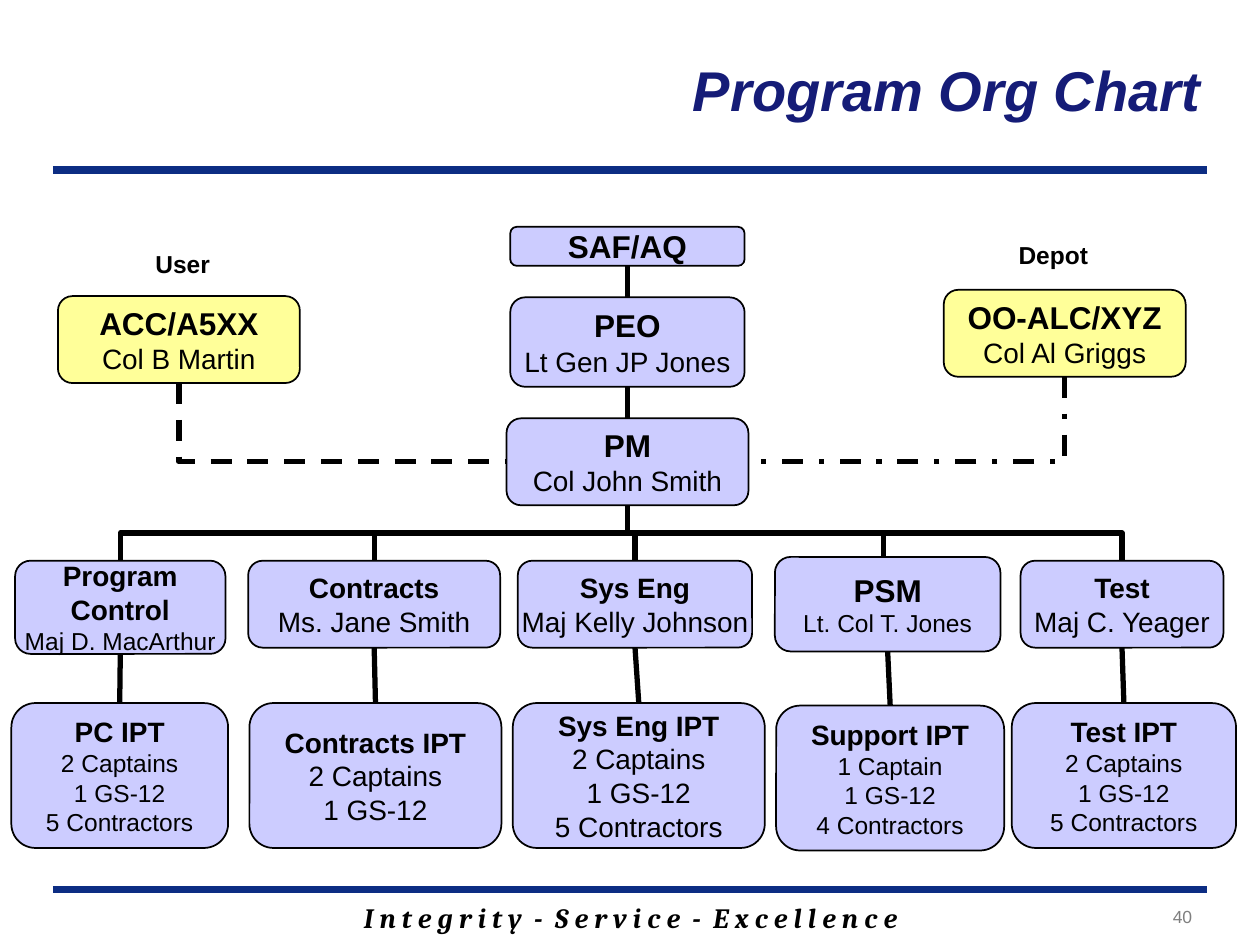
"""Build the program organisation chart slide."""
import pptx
import pptx.dml.color
import pptx.enum.dml
import pptx.enum.shapes
import pptx.enum.text
import pptx.oxml.ns
import pptx.util
from pptx.util import Inches

COLOURS = {
    "title": "151C77",
    "rule": "0C2D83",
    "program": "CCCCFF",
    "partner": "FFFF99",
    "ink": "000000",
    "number": "7F7F7F",
}
ALIGN = pptx.enum.text.PP_ALIGN
DASH = pptx.enum.dml.MSO_LINE
TOP, LEFT, BOTTOM, RIGHT = range(4)

BRANCHES = [
    ((0.12, 4.45, 1.67, 0.74), ["Program", "Control"], ["Maj D. MacArthur"], 16, 14,
     (0.09, 5.58, 1.72, 1.15), "PC IPT", ["2 Captains", "1 GS-12", "5 Contractors"], 14),
    ((1.97, 4.45, 2, 0.69), ["Contracts"], ["Ms. Jane Smith"], 16, 16,
     (1.98, 5.58, 2, 1.15), "Contracts IPT", ["2 Captains", "1 GS-12"], 16),
    ((4.11, 4.45, 1.86, 0.69), ["Sys Eng"], ["Maj Kelly Johnson"], 16, 16,
     (4.07, 5.58, 2, 1.15), "Sys Eng IPT", ["2 Captains", "1 GS-12", "5 Contractors"], 16),
    ((6.15, 4.42, 1.79, 0.75), ["PSM"], ["Lt. Col T. Jones"], 18, 14,
     (6.16, 5.6, 1.81, 1.15), "Support IPT", ["1 Captain", "1 GS-12", "4 Contractors"], 14),
    ((8.1, 4.45, 1.61, 0.69), ["Test"], ["Maj C. Yeager"], 16, 16,
     (8.03, 5.58, 1.78, 1.15), "Test IPT", ["2 Captains", "1 GS-12", "5 Contractors"], 14),
]


def colour(name):
    """Return the named colour."""
    return pptx.dml.color.RGBColor.from_string(COLOURS[name])


def inches(area):
    """Convert a tuple of inch values to lengths."""
    return [Inches(value) for value in area]


def format_para(para, text, size, bold=False, italic=False, ink="ink",
                align=ALIGN.CENTER, face="Arial"):
    """Write and format one paragraph."""
    para.text = text
    para.alignment = align
    font = para.font
    font.name, font.size = face, pptx.util.Pt(size)
    font.bold, font.italic = bold, italic
    font.color.rgb = colour(ink)


def add_label(page, area, text, size, wrap=False, **style):
    """Add a one-paragraph text box."""
    frame = page.shapes.add_textbox(*inches(area)).text_frame
    frame.word_wrap = wrap
    format_para(frame.paragraphs[0], text, size, **style)


def add_org_box(page, area, heads, details=(), head_size=18, detail_size=16, fill="program"):
    """Add a rounded box with bold heads above plain details."""
    box = page.shapes.add_shape(pptx.enum.shapes.MSO_SHAPE.ROUNDED_RECTANGLE, *inches(area))
    box.shadow.inherit = False
    box.fill.solid()
    box.fill.fore_color.rgb = colour(fill)
    box.line.color.rgb = colour("ink")
    box.line.width = pptx.util.Pt(1)
    frame = box.text_frame
    frame.word_wrap = False
    frame.vertical_anchor = pptx.enum.text.MSO_ANCHOR.MIDDLE
    lines = [(text, head_size, True) for text in heads]
    lines += [(text, detail_size, False) for text in details]
    for index, line in enumerate(lines):
        para = frame.add_paragraph() if index else frame.paragraphs[0]
        format_para(para, *line)
    return box


def add_line(page, begin, end, width=3, ink="ink", kind="STRAIGHT"):
    """Add a connector without a shadow between two points."""
    line = page.shapes.add_connector(
        getattr(pptx.enum.shapes.MSO_CONNECTOR, kind), *begin, *end)
    line.line.color.rgb = colour(ink)
    line.line.width = pptx.util.Pt(width)
    properties = line._element.spPr
    properties.append(properties.makeelement(pptx.oxml.ns.qn("a:effectLst"), {}))
    return line


def side_point(box, side):
    """Return the middle of one side of a box."""
    across = {LEFT: 0, RIGHT: box.width}.get(side, box.width // 2)
    down = {TOP: 0, BOTTOM: box.height}.get(side, box.height // 2)
    return box.left + across, box.top + down


def join(page, upper, lower, side=TOP, kind="STRAIGHT"):
    """Connect the bottom of one box to a side of another."""
    line = add_line(page, side_point(upper, BOTTOM), side_point(lower, side), kind=kind)
    line.begin_connect(upper, BOTTOM)
    line.end_connect(lower, side)
    return line


def join_elbow(page, upper, lower, side=TOP, dash=None):
    """Connect two boxes with an elbow that leaves the upper one downwards."""
    line = join(page, upper, lower, side, "ELBOW")
    (begin_x, begin_y), (end_x, end_y) = side_point(upper, BOTTOM), side_point(lower, side)
    line.width, line.height = end_y - begin_y, abs(end_x - begin_x)
    line.left = (begin_x + end_x - line.width) // 2
    line.top = (begin_y + end_y - line.height) // 2
    properties = line._element.spPr
    frame = properties.find(pptx.oxml.ns.qn("a:xfrm"))
    rightward = end_x > begin_x
    frame.set("rot", str((270 if rightward else 90) * 60000))
    frame.set("flipH", "1" if rightward else "0")
    frame.set("flipV", "0")
    if side != TOP:
        properties.find(pptx.oxml.ns.qn("a:prstGeom")).set("prst", "bentConnector2")
    if dash:
        line.line.dash_style = dash


def add_frame(page, left, right):
    """Add the title, the two rules and the footer."""
    title = page.shapes.title
    title.left, title.top, title.width, title.height = inches((1.82, 0.08, 7.81, 1.25))
    title.text_frame.vertical_anchor = pptx.enum.text.MSO_ANCHOR.MIDDLE
    format_para(title.text_frame.paragraphs[0], "Program Org Chart", 32, True, True,
                "title", ALIGN.RIGHT)
    for height in (1.35, 7.06):
        add_line(page, inches((left, height)), inches((right, height)), 4.5, "rule")
    add_label(page, (1.42, 7.1, 7.17, 0.37),
              "I n t e g r i t y  -  S e r v i c e  -  E x c e l l e n c e", 16,
              wrap=True, bold=True, italic=True, face="Cambria")
    add_label(page, (8.31, 7.14, 1.25, 0.33), "40", 10, wrap=True,
              ink="number", align=ALIGN.RIGHT)


def add_command(page):
    """Add the chain of command and return the program manager's box."""
    office = add_org_box(page, (4.05, 1.8, 1.86, 0.31), ["SAF/AQ"])
    executive = add_org_box(page, (4.05, 2.36, 1.86, 0.71), ["PEO"], ["Lt Gen JP Jones"])
    manager = add_org_box(page, (4.02, 3.32, 1.92, 0.69), ["PM"], ["Col John Smith"])
    join(page, office, executive)
    join(page, executive, manager)
    return manager


def add_partner(page, manager, area, label_area, label, unit, officer, side, dash):
    """Add a labelled outside partner linked to the manager."""
    add_label(page, label_area, label, 14, bold=True)
    partner = add_org_box(page, area, [unit], [officer], fill="partner")
    join_elbow(page, partner, manager, side, dash)


def add_branch(page, manager, area, heads, names, head_size, name_size,
               team_area, team, members, member_size):
    """Add a branch lead with the team below."""
    lead = add_org_box(page, area, heads, names, head_size, name_size)
    group = add_org_box(page, team_area, [team], members, 16, member_size)
    if heads != ["PSM"]:
        join_elbow(page, manager, lead)
    join(page, lead, group)


def main():
    """Build and save the deck."""
    deck = pptx.Presentation()
    deck.slide_width, deck.slide_height = Inches(10), Inches(7.5)
    page = deck.slides.add_slide(deck.slide_layouts[5])
    add_frame(page, 0.42, 9.58)
    add_line(page, inches((7.01, 4.25)), inches((7.01, 4.69)))
    manager = add_command(page)
    add_partner(page, manager, (0.46, 2.35, 1.92, 0.69), (1.05, 1.93, 0.8, 0.33),
                "User", "ACC/A5XX", "Col B Martin", LEFT, DASH.DASH)
    add_partner(page, manager, (7.49, 2.3, 1.92, 0.69), (7.96, 1.86, 0.8, 0.33),
                "Depot", "OO-ALC/XYZ", "Col Al Griggs", RIGHT, DASH.DASH_DOT)
    for branch in BRANCHES:
        add_branch(page, manager, *branch)
    deck.save("out.pptx")


if __name__ == "__main__":
    main()
